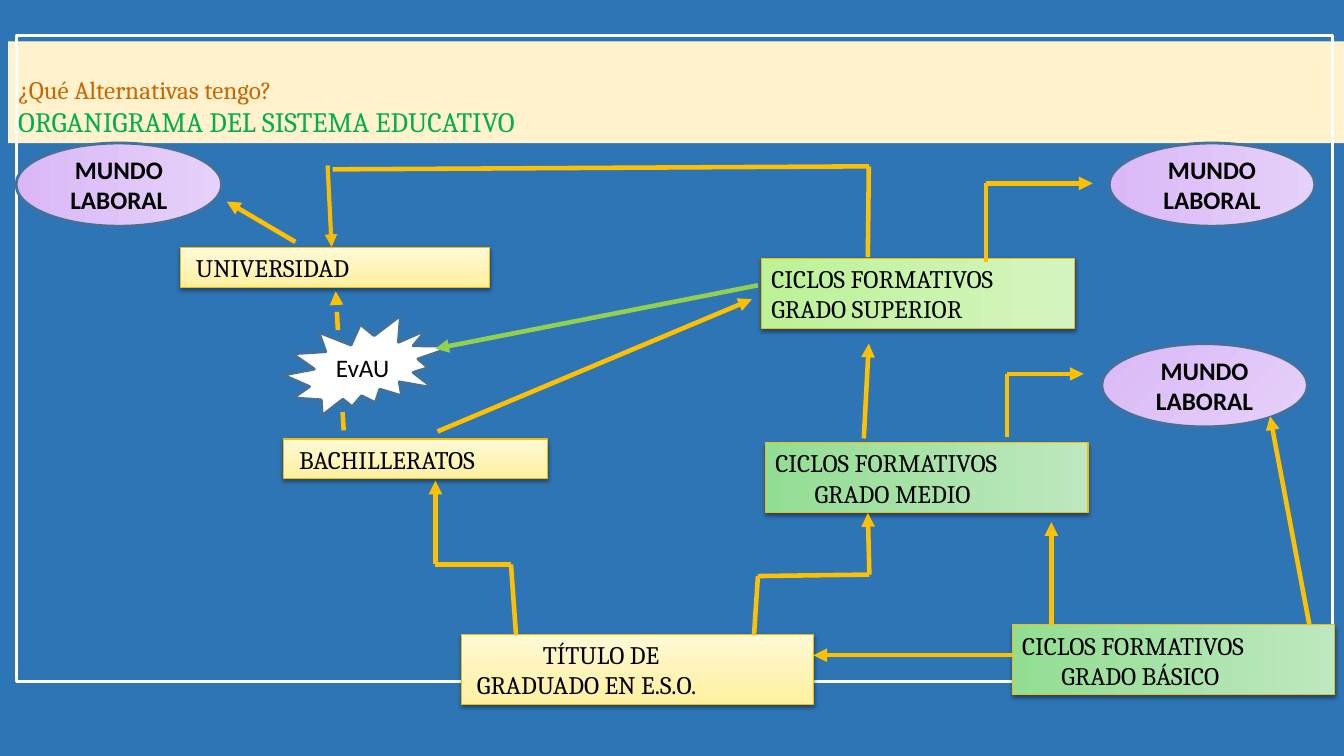
from lxml.etree import SubElement
from pptx import Presentation
from pptx.dml.color import RGBColor
from pptx.enum.dml import MSO_LINE
from pptx.enum.shapes import MSO_CONNECTOR, MSO_SHAPE
from pptx.enum.text import MSO_ANCHOR, MSO_AUTO_SIZE, PP_ALIGN
from pptx.oxml.ns import qn
from pptx.util import Pt

COLORS = {
    "background": "2E75B6", "banner": "FFF2CC", "question": "CC6600", "heading": "00B050",
    "white": "FFFFFF", "black": "000000", "outline": "42719B", "box line": "F9BB00",
    "arrow": "FFC000", "green arrow": "92D050",
}
# Start colour, end colour, counter-clockwise angle
GRADIENTS = {
    "yellow": ("FFF09F", "FFF9D6", 90),
    "green": ("93DD93", "BEE8BE", 0),
    "lime": ("BDF297", "D5F5C0", 0),
    "lilac": ("DAB8F7", "E6D1FA", 0),
    "slanted lilac": ("DAB8F7", "E6D1FA", 315),
}
SERIF = {"name": "Cambria", "size": Pt(18), "bold": False}
SANS = {"name": "Calibri", "size": Pt(18), "bold": False}
SANS_BOLD = {**SANS, "bold": True}
TITLE_FRAME = {"auto_size": MSO_AUTO_SIZE.NONE, "word_wrap": True,
               "vertical_anchor": MSO_ANCHOR.BOTTOM, "margin_left": Pt(7.2),
               "margin_right": Pt(7.2), "margin_top": Pt(3.6), "margin_bottom": Pt(3.6)}


def set_attributes(target, values):
    for name, value in values.items():
        setattr(target, name, value)


def color(name):
    return RGBColor.from_string(COLORS.get(name, name))


class Diagram:
    """Holds the slide and the shared style; each method draws one kind of element."""

    def __init__(self, slide):
        self.slide = slide
        slide.background.fill.solid()
        slide.background.fill.fore_color.rgb = color("background")

    def add_text(self, paragraph, text, font, font_color, alignment, indent=0):
        paragraph.alignment = alignment
        paragraph_properties = paragraph._p.get_or_add_pPr()
        paragraph_properties.set("marL", str(Pt(indent)))
        paragraph_properties.set("indent", "0")
        run = paragraph.add_run()
        run.text = text
        set_attributes(run.font, font)
        run.font.color.rgb = color(font_color)

    def title(self, left, top, width, height, lines):
        title = self.slide.shapes.title
        set_attributes(title, {"left": Pt(left), "top": Pt(top),
                               "width": Pt(width), "height": Pt(height)})
        title.fill.solid()
        title.fill.fore_color.rgb = color("banner")
        frame = title.text_frame
        set_attributes(frame, TITLE_FRAME)
        for index, (text, size, font_color) in enumerate(lines):
            paragraph = frame.add_paragraph() if index else frame.paragraphs[0]
            set_attributes(paragraph, {"line_spacing": 1.0, "space_before": Pt(0)})
            self.add_text(paragraph, text, {**SERIF, "size": Pt(size)}, font_color, PP_ALIGN.LEFT)

    def shape(self, kind, left, top, width, height, line_color, line_width):
        shape = self.slide.shapes.add_shape(kind, Pt(left), Pt(top), Pt(width), Pt(height))
        shape.shadow.inherit = False
        shape.fill.background()
        shape.line.color.rgb = color(line_color)
        shape.line.width = Pt(line_width)
        return shape

    def gradient(self, shape, name):
        *stop_colors, angle = GRADIENTS[name]
        shape.fill.gradient()
        shape.fill.gradient_angle = angle
        for position, (stop, stop_color) in enumerate(zip(shape.fill.gradient_stops, stop_colors)):
            stop.position = position
            stop.color.rgb = color(stop_color)

    def box(self, left, top, width, height, gradient, lines):
        """Draw a shadowed stage box; lines are (text, indent) pairs."""
        box = self.shape(MSO_SHAPE.RECTANGLE, left, top, width, height, "box line", 0.75)
        self.gradient(box, gradient)
        effects = box._element.spPr.find(qn("a:effectLst"))
        shadow = SubElement(effects, qn("a:outerShdw"), blurRad=str(Pt(3.1)), dist=str(Pt(1.6)),
                            dir="5400000", algn="ctr", rotWithShape="0")
        shade = SubElement(shadow, qn("a:srgbClr"), val=COLORS["black"])
        SubElement(shade, qn("a:alpha"), val="38000")
        frame = box.text_frame
        set_attributes(frame, {"word_wrap": True, "vertical_anchor": MSO_ANCHOR.TOP})
        for index, (text, indent) in enumerate(lines):
            paragraph = frame.add_paragraph() if index else frame.paragraphs[0]
            self.add_text(paragraph, text, SERIF, "black", PP_ALIGN.LEFT, indent)

    def label(self, shape, text, font):
        set_attributes(shape.text_frame,
                       {"word_wrap": True, "vertical_anchor": MSO_ANCHOR.MIDDLE})
        self.add_text(shape.text_frame.paragraphs[0], text, font, "black", PP_ALIGN.CENTER)

    def work_world(self, left, top, gradient="lilac"):
        oval = self.shape(MSO_SHAPE.OVAL, left, top, 146.9, 59.4, "outline", 2)
        self.gradient(oval, gradient)
        self.label(oval, "MUNDO LABORAL", SANS_BOLD)

    def exam(self, left, top, width, height, text):
        seal = self.shape(MSO_SHAPE.EXPLOSION2, left, top, width, height, "outline", 2)
        seal.fill.solid()
        seal.fill.fore_color.rgb = color("white")
        self.label(seal, text, SANS)

    def route(self, *points, line_color="arrow", width=3.25, dash=None, arrow=True):
        """Join the points with straight connectors, the last one with an arrowhead."""
        for start, end in zip(points, points[1:]):
            connector = self.slide.shapes.add_connector(
                MSO_CONNECTOR.STRAIGHT, *(Pt(value) for value in (*start, *end)))
            connector.line.color.rgb = color(line_color)
            set_attributes(connector.line, {"width": Pt(width), "dash_style": dash})
            SubElement(connector._element.spPr, qn("a:effectLst"))
        if arrow:
            line = connector._element.spPr.find(qn("a:ln"))
            SubElement(line, qn("a:tailEnd"), type="triangle")


def main():
    presentation = Presentation()
    set_attributes(presentation, {"slide_width": Pt(960), "slide_height": Pt(540)})
    diagram = Diagram(presentation.slides.add_slide(presentation.slide_layouts[5]))

    diagram.title(5.8, 29.5, 959, 72.7, [
        ("¿Qué Alternativas tengo?", 18, "question"),
        ("ORGANIGRAMA DEL SISTEMA EDUCATIVO", 20, "heading"),
    ])
    diagram.shape(MSO_SHAPE.RECTANGLE, 11.5, 25.2, 940.3, 461.5, "white", 2.25)

    vocational = "CICLOS FORMATIVOS"
    for box in (
        (128.9, 176.8, 220.8, 28.4, "yellow", [("UNIVERSIDAD", 4)]),
        (329.6, 453.3, 251.3, 50, "yellow", [("TÍTULO DE", 51), ("GRADUADO EN E.S.O.", 4)]),
        (202.5, 313.6, 188.6, 28.4, "yellow", [("BACHILLERATOS", 4)]),
        (546.8, 316.3, 230.4, 50, "green", [(vocational, 0), ("GRADO MEDIO", 28)]),
        (543.9, 184.6, 223.5, 50, "lime", [(vocational, 0), ("GRADO SUPERIOR", 0)]),
        (723, 446.4, 230.4, 50, "green", [(vocational, 0), ("GRADO BÁSICO", 28)]),
    ):
        diagram.box(*box)

    diagram.work_world(787, 245.5, "slanted lilac")
    diagram.work_world(792.3, 102.2)
    diagram.work_world(11.5, 102.2)

    for points in (
        [(368.6, 453.6), (365, 403.2), (311, 403.2), (311, 343.4)],
        [(538.6, 453.6), (541.4, 411.5), (621, 410.4), (619.9, 366.5)],
        [(719.3, 312.5), (719.3, 267.1), (774, 267.1)],
        [(617, 313.2), (620.6, 245.5)],
        [(704.2, 187.2), (704.2, 131), (780.5, 131)],
        [(312.5, 308.2), (537.1, 213.8)],
        [(211, 172.8), (162, 144)],
        [(935.3, 446.4), (907.2, 297.4)],
        [(751, 446.4), (751, 373)],
        [(722.9, 468), (581, 468)],
    ):
        diagram.route(*points)
    diagram.route((619.9, 183.6), (620.6, 118.8), (237.6, 121), arrow=False)
    diagram.route((234, 118.1), (236.9, 176.4), line_color="box line", width=3)
    diagram.route((245.5, 307.4), (239.8, 208.1), dash=MSO_LINE.DASH_DOT)
    diagram.exam(202.3, 225.4, 122.4, 71.3, "EvAU")
    diagram.route((541.4, 203.8), (311, 249.1), line_color="green arrow")

    presentation.save("out.pptx")


if __name__ == "__main__":
    main()
